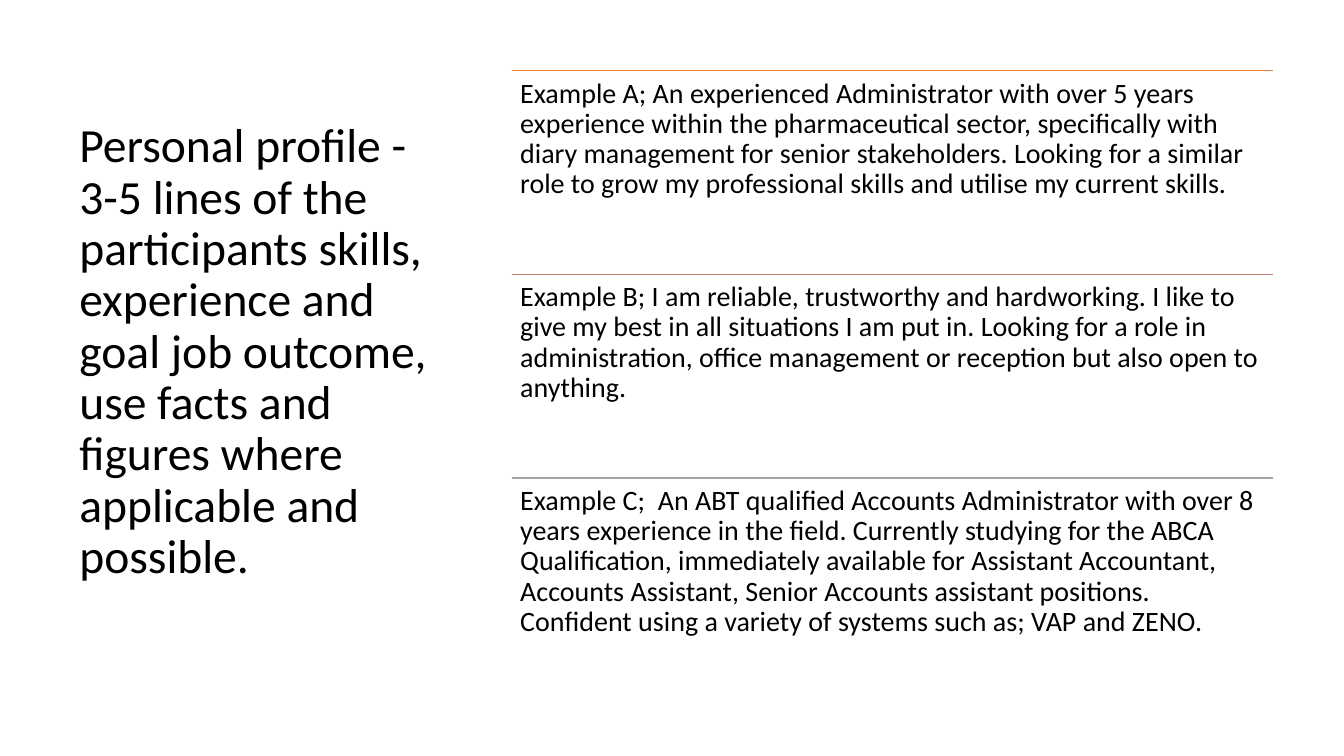
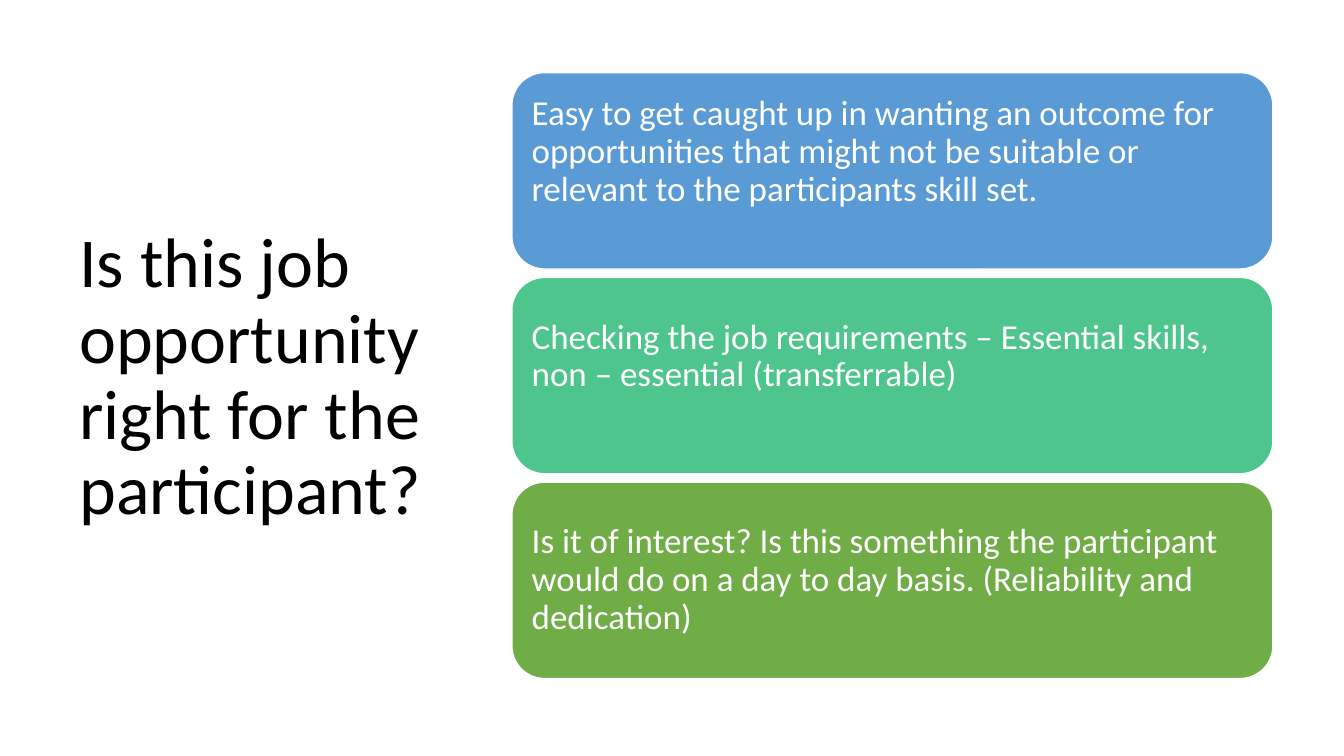
from lxml import etree
from pptx import Presentation
from pptx.dml.color import RGBColor
from pptx.enum.shapes import MSO_CONNECTOR, MSO_SHAPE
from pptx.enum.text import MSO_ANCHOR, MSO_AUTO_SIZE, PP_ALIGN
from pptx.oxml.ns import qn
from pptx.util import Cm, Pt

STRAIGHT = MSO_CONNECTOR.STRAIGHT
ROUNDED = MSO_SHAPE.ROUNDED_RECTANGLE
TOP, MIDDLE = MSO_ANCHOR.TOP, MSO_ANCHOR.MIDDLE
LEFT_ALIGNED = PP_ALIGN.LEFT
NO_AUTOFIT = MSO_AUTO_SIZE.NONE
TITLE_ONLY = 5

FONT = "Calibri"
BLACK, WHITE = "000000", "FFFFFF"
COLUMN_LEFT, COLUMN_WIDTH = 12.9, 19.18
BODY_TOP, BODY_HEIGHT = 1.78, 15.52
ROW_PITCH = 5.13
CARD_TOP, CARD_HEIGHT, CARD_PITCH = 1.83, 4.95, 5.16

EXAMPLES = [
    ("ED7D31", "Example A; An experienced Administrator with over 5 years "
     "experience within the pharmaceutical sector, specifically with diary "
     "management for senior stakeholders. Looking for a similar role to grow "
     "my professional skills and utilise my current skills."),
    ("C48170", "Example B; I am reliable, trustworthy and hardworking. I like "
     "to give my best in all situations I am put in. Looking for a role in "
     "administration, office management or reception but also open to "
     "anything."),
    ("A5A5A5", "Example C;  An ABT qualified Accounts Administrator with over "
     "8 years experience in the field. Currently studying for the ABCA "
     "Qualification, immediately available for Assistant Accountant, Accounts "
     "Assistant, Senior Accounts assistant positions. Confident using a "
     "variety of systems such as; VAP and ZENO."),
]

# Fill, text and the extra space in cm kept below the text
CARDS = [
    ("5B9BD5", "Easy to get caught up in wanting an outcome for opportunities "
     "that might not be suitable or relevant to the participants skill set.",
     0.95),
    ("4DC58D", "Checking the job requirements – Essential skills, non – "
     "essential (transferrable)", 0.95),
    ("70AD47", "Is it of interest? Is this something the participant would do "
     "on a day to day basis. (Reliability and dedication)", 0),
]


def color(value):
    return RGBColor.from_string(value)


def write(box, text, size, ink, anchor, inset, space_below=0):
    """Fill a shape with one left-aligned paragraph; insets are in cm."""
    frame = box.text_frame
    frame.word_wrap = True
    frame.auto_size = NO_AUTOFIT
    frame.vertical_anchor = anchor
    frame.margin_left = frame.margin_right = frame.margin_top = Cm(inset)
    frame.margin_bottom = Cm(inset + space_below)
    para = frame.paragraphs[0]
    para.alignment = LEFT_ALIGNED
    para.line_spacing = 0.9
    span = para.add_run()
    span.text = text
    span.font.name = FONT
    span.font.size = Pt(size)
    span.font.color.rgb = color(ink)


def add_page(deck, title, size, space_below=0):
    """Add a slide with its title in the left column."""
    page = deck.slides.add_slide(deck.slide_layouts[TITLE_ONLY])
    box = page.shapes.title
    box.left, box.top = Cm(1.75), Cm(BODY_TOP)
    box.width, box.height = Cm(9.5), Cm(BODY_HEIGHT)
    write(box, title, size, BLACK, MIDDLE, 0.25, space_below)
    return page


def add_rule(page, top, ink):
    rule = page.shapes.add_connector(
        STRAIGHT, Cm(COLUMN_LEFT), Cm(top),
        Cm(COLUMN_LEFT + COLUMN_WIDTH), Cm(top))
    rule.line.color.rgb = color(ink)
    rule.line.width = Pt(1)
    etree.SubElement(rule._element.spPr, qn("a:effectLst"))


def add_example(page, top, ink, text):
    add_rule(page, top, ink)
    box = page.shapes.add_textbox(
        Cm(COLUMN_LEFT), Cm(top), Cm(COLUMN_WIDTH), Cm(ROW_PITCH))
    write(box, text, 20, BLACK, TOP, 0.21)


def add_card(page, top, fill, text, space_below):
    card = page.shapes.add_shape(
        ROUNDED, Cm(COLUMN_LEFT), Cm(top), Cm(COLUMN_WIDTH), Cm(CARD_HEIGHT))
    card.shadow.inherit = False
    card.fill.solid()
    card.fill.fore_color.rgb = color(fill)
    card.line.color.rgb = color(WHITE)
    card.line.width = Pt(1)
    write(card, text, 25, WHITE, MIDDLE, 0.26, space_below)


def main():
    deck = Presentation()
    deck.slide_width, deck.slide_height = Cm(33.87), Cm(19.05)

    profile = add_page(
        deck, "Personal profile - 3-5 lines of the participants skills, "
        "experience and goal job outcome, use facts and figures where "
        "applicable and possible.", 34, space_below=1.3)
    for row, (ink, text) in enumerate(EXAMPLES):
        add_example(profile, BODY_TOP + row * ROW_PITCH, ink, text)

    opportunity = add_page(
        deck, "Is this job opportunity right for the participant?", 50)
    for row, (fill, text, space_below) in enumerate(CARDS):
        add_card(opportunity, CARD_TOP + row * CARD_PITCH, fill, text,
                 space_below)

    deck.save("out.pptx")


if __name__ == "__main__":
    main()
